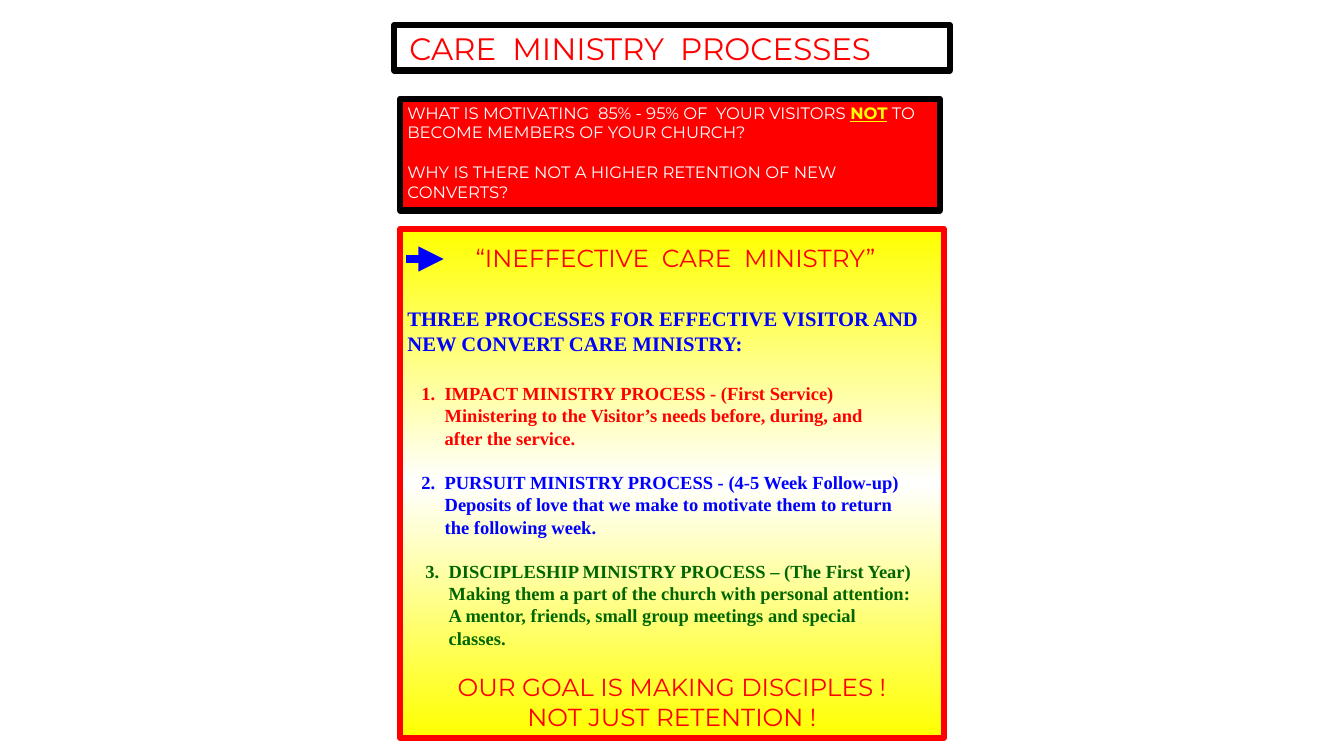
from copy import deepcopy
from lxml.etree import SubElement
from pptx import Presentation
from pptx.dml.color import RGBColor
from pptx.enum.shapes import MSO_CONNECTOR, MSO_SHAPE
from pptx.enum.text import MSO_ANCHOR, PP_ALIGN
from pptx.oxml.ns import qn
from pptx.util import Inches, Pt

# The slide is a grid of 1333 columns by 750 rows
CELL = Inches(0.01)
SANS, SERIF = "Montserrat", "Times New Roman"
RED, BLUE, GREEN = "FF0000", "0000FF", "006600"
YELLOW, WHITE, BLACK = "FFFF00", "FFFFFF", "000000"
hue = RGBColor.from_string

deck = Presentation()
deck.slide_width, deck.slide_height = 1333 * CELL, 750 * CELL
slide = deck.slides.add_slide(deck.slide_layouts[6])


def add_box(left, top, width, height, edge, inset=(7, 4)):
    box = slide.shapes.add_shape(
        MSO_SHAPE.RECTANGLE, left * CELL, top * CELL, width * CELL, height * CELL)
    box.shadow.inherit = False
    box.fill.background()
    box.line.color.rgb = hue(edge)
    box.line.width = Pt(4.5)
    frame = box.text_frame
    frame.word_wrap = True
    frame.vertical_anchor = MSO_ANCHOR.TOP
    frame.margin_left, frame.margin_top = inset[0] * CELL, inset[1] * CELL
    frame.margin_right, frame.margin_bottom = 7 * CELL, 4 * CELL
    return box


def style(para, font, size, color, pitch, before=0, align=PP_ALIGN.LEFT):
    para.alignment = align
    para.line_spacing = Pt(pitch)
    para.space_before = Pt(before)
    for run in para.runs:
        run.font.name = font
        run.font.size = Pt(size)
        run.font.bold = font == SERIF
        run.font.color.rgb = hue(color)


# Yellow panel with a white band in the middle
panel = add_box(397, 227, 539, 505, RED, inset=(7, 14))
panel.fill.gradient()
panel.fill.gradient_angle = 90
stops = panel._element.spPr.find(qn("a:gradFill")).find(qn("a:gsLst"))
stops.insert(1, deepcopy(stops[0]))
for stop, color, place in zip(panel.fill.gradient_stops, (YELLOW, WHITE, YELLOW), (0, 0.5, 1)):
    stop.color.rgb = hue(color)
    stop.position = place

# Panel text: words, font, size, color, line pitch, space before, alignment, indents
MID, LEFT = PP_ALIGN.CENTER, PP_ALIGN.LEFT
rows = [
    ("“INEFFECTIVE  CARE  MINISTRY”", SANS, 17.6, RED, 21.4, 0, MID, 7, 0),
    ("THREE PROCESSES FOR EFFECTIVE VISITOR AND NEW CONVERT CARE MINISTRY:",
     SERIF, 14.7, BLUE, 17.9, 23, LEFT, 0, 0),
    ("1.  IMPACT MINISTRY PROCESS - (First Service)\v"
     "Ministering to the Visitor’s needs before, during, and\v"
     "after the service.", SERIF, 13.2, RED, 16, 19, LEFT, 37, -23),
    ("2.  PURSUIT MINISTRY PROCESS - (4-5 Week Follow-up)\v"
     "Deposits of love that we make to motivate them to return\v"
     "the following week.", SERIF, 13.2, BLUE, 16, 15.5, LEFT, 37, -23),
    ("3.  DISCIPLESHIP MINISTRY PROCESS – (The First Year)\v"
     "Making them a part of the church with personal attention:\v"
     "A mentor, friends, small group meetings and special\v"
     "classes.", SERIF, 13.2, GREEN, 16, 15.5, LEFT, 41, -23),
    ("OUR GOAL IS MAKING DISCIPLES !", SANS, 17.6, RED, 21.4, 16, MID, 0, 0),
    ("NOT JUST RETENTION !", SANS, 17.6, RED, 21.4, 0, MID, 0, 0),
]
frame = panel.text_frame
for i, (words, *look, margin, hang) in enumerate(rows):
    para = frame.add_paragraph() if i else frame.paragraphs[0]
    para.text = words
    style(para, *look)
    props = para._p.get_or_add_pPr()
    props.set("marL", str(margin * CELL))
    props.set("indent", str(hang * CELL))

# Arrow beside the panel heading
arrow = slide.shapes.add_connector(
    MSO_CONNECTOR.STRAIGHT, 403 * CELL, 257 * CELL, 440 * CELL, 257 * CELL)
arrow.line.color.rgb = hue(BLUE)
arrow.line.width = Pt(6)
SubElement(arrow.line._get_or_add_ln(), qn("a:tailEnd"), type="triangle")
SubElement(arrow._element.spPr, qn("a:effectLst"))

# Red box with the two questions
ask = add_box(397, 98, 535, 111, BLACK)
ask.fill.solid()
ask.fill.fore_color.rgb = hue(RED)
first = ask.text_frame.paragraphs[0]
for words in ("WHAT IS MOTIVATING  85% - 95% OF  YOUR VISITORS ", "NOT",
              " TO BECOME MEMBERS OF YOUR CHURCH?"):
    first.add_run().text = words
style(first, SANS, 11.8, WHITE, 14.1)
stress = first.runs[1].font
stress.bold = stress.underline = True
stress.color.rgb = hue(YELLOW)
second = ask.text_frame.add_paragraph()
second.text = "WHY IS THERE NOT A HIGHER RETENTION OF NEW CONVERTS?"
style(second, SANS, 11.8, WHITE, 14.1, 14.1)

# Title
title = add_box(391, 25, 551, 45, BLACK, inset=(15, 4))
title.text_frame.text = "CARE  MINISTRY  PROCESSES"
style(title.text_frame.paragraphs[0], SANS, 22.1, RED, 26.9)

deck.save("out.pptx")
